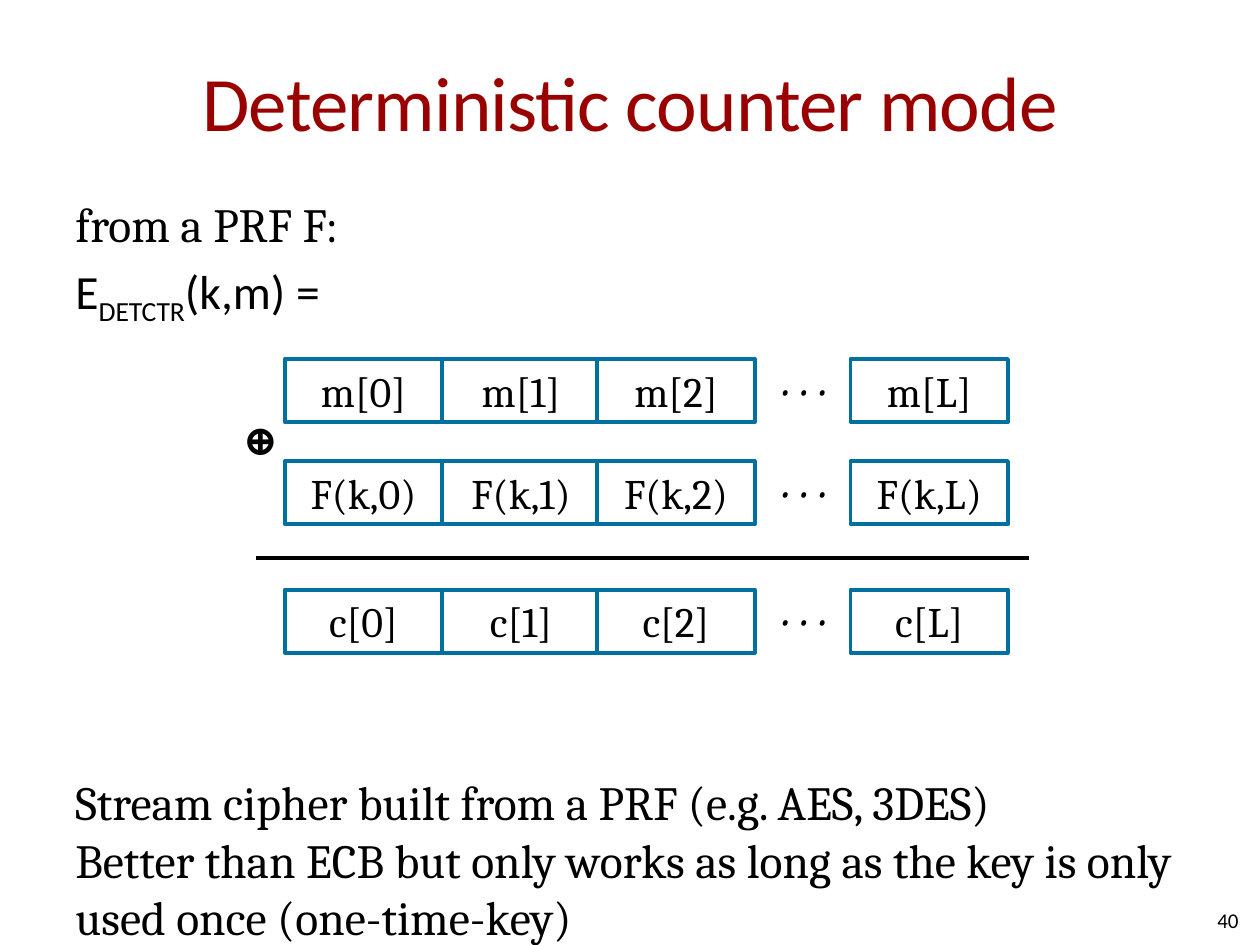
import pptx
import pptx.util
import pptx.dml.color
import pptx.enum.shapes
import pptx.enum.text
import pptx.oxml.ns
import lxml.etree

Pt = pptx.util.Pt
ALIGN = pptx.enum.text.PP_ALIGN
ANCHOR = pptx.enum.text.MSO_ANCHOR

COLORS = {
    "title": "990000",
    "text": "000000",
    "border": "00709E",
    "cell": "FFFFFF",
}
BODY_SIZE = 27.2
CELL_WIDTH, CELL_HEIGHT = 90, 36
CELL_LEFTS = [162.72, 252.72, 341.28, 486]
INDICES = ["0", "1", "2", "L"]
ROWS = [(205.2, "m[{}]"), (263.52, "F(k,{})"), (336.96, "c[{}]")]


def color(name):
    return pptx.dml.color.RGBColor.from_string(COLORS[name])


def style_span(span, size, font="Cambria", tint="text"):
    span.font.size = Pt(size)
    span.font.name = font
    span.font.color.rgb = color(tint)


def set_frame(box, inset=(0, 0), anchor=ANCHOR.TOP, wrap=True):
    frame = box.text_frame
    frame.margin_left = frame.margin_right = Pt(inset[0])
    frame.margin_top = frame.margin_bottom = Pt(inset[1])
    frame.vertical_anchor = anchor
    frame.word_wrap = wrap
    return frame


def write_line(frame, text, size, align, font="Cambria", tint="text"):
    para = frame.paragraphs[0]
    para.text = text
    para.alignment = align
    span = para.runs[0]
    style_span(span, size, font, tint)
    return span


def add_text(shapes, place, text, size, align=ALIGN.CENTER, font="Cambria",
             tint="text", **frame_options):
    box = shapes.add_textbox(*map(Pt, place))
    frame = set_frame(box, **frame_options)
    return write_line(frame, text, size, align, font, tint)


def add_cell(shapes, left, top, text):
    cell = shapes.add_shape(pptx.enum.shapes.MSO_SHAPE.RECTANGLE, Pt(left),
                            Pt(top), Pt(CELL_WIDTH), Pt(CELL_HEIGHT))
    cell.shadow.inherit = False
    cell.fill.solid()
    cell.fill.fore_color.rgb = color("cell")
    cell.line.color.rgb = color("border")
    cell.line.width = Pt(2.25)
    write_line(set_frame(cell, anchor=ANCHOR.MIDDLE), text, 24, ALIGN.CENTER)


def add_block_row(page, top, pattern):
    group = page.shapes.add_group_shape()
    for left, index in zip(CELL_LEFTS, INDICES):
        add_cell(group.shapes, left, top, pattern.format(index))
    dots = add_text(group.shapes, (444.96, top + 8, 28.8, 19.44), "• • •", 16,
                    wrap=False)
    dots.font.italic = True


def add_rule(page, left, right, top):
    rule = page.shapes.add_connector(pptx.enum.shapes.MSO_CONNECTOR.STRAIGHT,
                                     Pt(left), Pt(top), Pt(right), Pt(top))
    rule.line.color.rgb = color("text")
    rule.line.width = Pt(2.25)
    lxml.etree.SubElement(rule._element.spPr, pptx.oxml.ns.qn("a:effectLst"))


def add_body(page):
    box = page.shapes.add_textbox(Pt(36), Pt(108), Pt(648), Pt(408.24))
    frame = set_frame(box, inset=(7.2, 3.6))
    intro, formula, remarks = (frame.paragraphs[0], frame.add_paragraph(),
                               frame.add_paragraph())

    intro.text = "from a PRF F:"
    remarks.text = ("Stream cipher built from a PRF (e.g. AES, 3DES)\v"
                    "Better than ECB but only works as long as the key is "
                    "only used once (one-time-key)")
    for para in (intro, remarks):
        for span in para.runs:
            style_span(span, BODY_SIZE)

    # Formula with a subscript
    for text, baseline in [("E", 0), ("DETCTR", -25000), ("(k,m) =", 0)]:
        span = formula.add_run()
        span.text = text
        style_span(span, BODY_SIZE, "Calibri")
        if baseline:
            span.font._element.set("baseline", str(baseline))

    # The last paragraph leaves room for the diagram
    for para, gap in [(intro, 5.44), (formula, 5.44), (remarks, 255.1)]:
        para.alignment = ALIGN.LEFT
        para.space_before = Pt(gap)


def main():
    deck = pptx.Presentation()
    deck.slide_width, deck.slide_height = Pt(720), Pt(540)
    page = deck.slides.add_slide(deck.slide_layouts[6])

    # Title and page number
    title = add_text(page.shapes, (36, 12.24, 648, 90),
                     "Deterministic counter mode", 44, font="Calibri",
                     tint="title", inset=(0, 3.6), anchor=ANCHOR.MIDDLE)
    title.font._element.set("spc", "-50")
    add_text(page.shapes, (540, 511.2, 167.76, 28.8), "40", 12, ALIGN.RIGHT,
             font="Calibri", anchor=ANCHOR.MIDDLE)

    # Statement and remarks
    add_body(page)

    # Message blocks XOR keystream blocks give ciphertext blocks
    for top, pattern in ROWS:
        add_block_row(page, top, pattern)
    xor_sign = add_text(page.shapes, (131.76, 232.56, 27.36, 36), "⊕", 24,
                        inset=(7.2, 3.6), wrap=False)
    xor_sign.font.bold = True
    add_rule(page, 146.16, 588.24, 318.96)

    deck.save("out.pptx")


if __name__ == "__main__":
    main()
